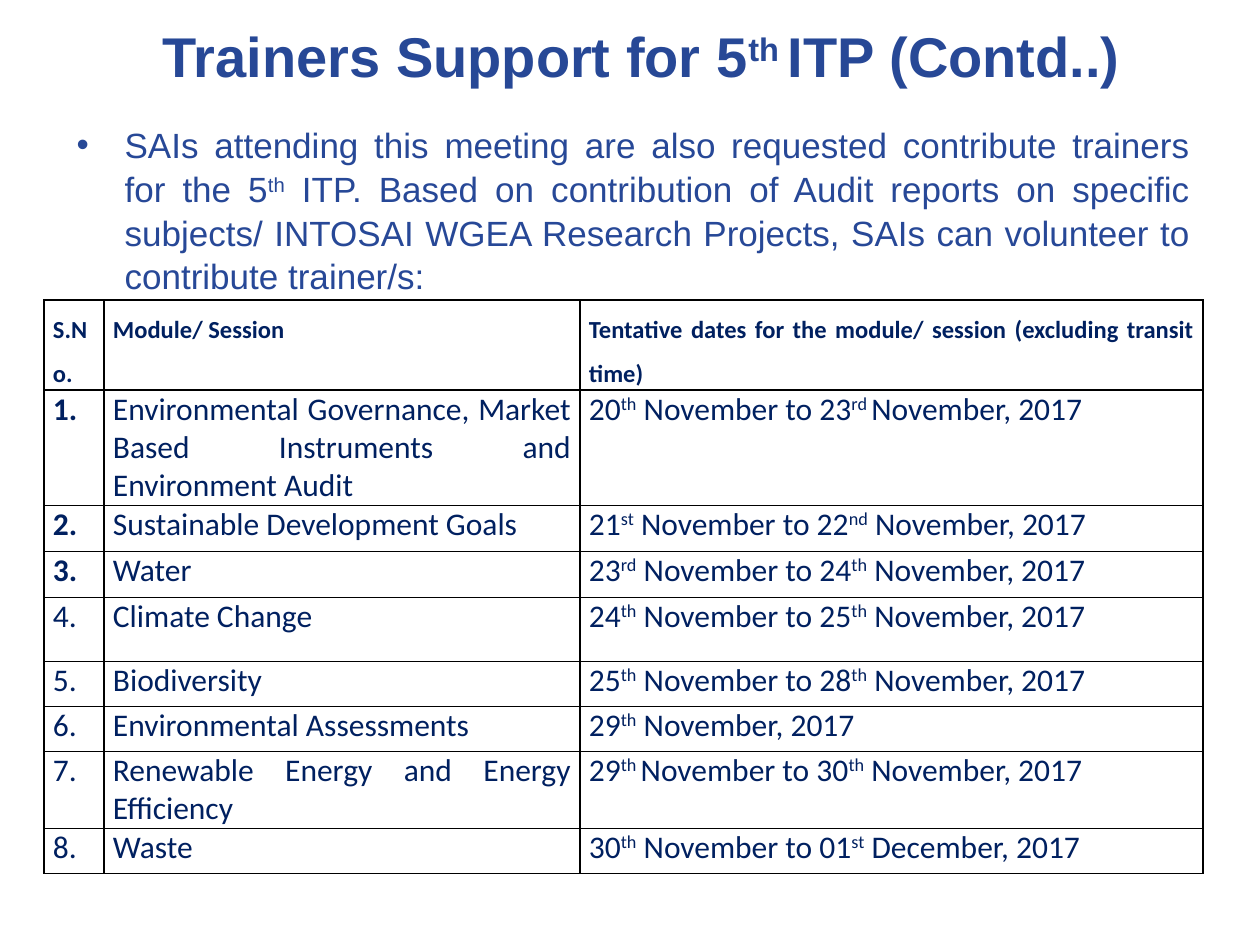
from lxml.etree import SubElement
from pptx import Presentation
from pptx.dml.color import RGBColor
from pptx.enum.text import MSO_ANCHOR, MSO_AUTO_SIZE, PP_ALIGN
from pptx.oxml.ns import qn
from pptx.util import Emu, Pt

HEADINGS = ["S.No.", "Module/ Session",
            "Tentative dates for the module/ session (excluding transit time)"]
SESSIONS = [
    ("Environmental Governance, Market Based Instruments and Environment Audit",
     "20^th^ November to 23^rd ^November, 2017"),
    ("Sustainable Development Goals", "21^st^ November to 22^nd^ November, 2017"),
    ("Water", "23^rd^ November to 24^th^ November, 2017"),
    ("Climate Change", "24^th^ November to 25^th^ November, 2017"),
    ("Biodiversity", "25^th^ November to 28^th^ November, 2017"),
    ("Environmental Assessments", "29^th^ November, 2017"),
    ("Renewable Energy and Energy Efficiency",
     "29^th ^November to 30^th^ November, 2017"),
    ("Waste", "30^th^ November to 01^st^ December, 2017"),
]
BOLD_NUMBERS = 3
COLUMN_WIDTHS = [60, 476, 623]
ROW_HEIGHTS = [90, 96, 46, 46, 64, 45, 45, 39, 45]


def px(length):
    return Emu(round(length * 914400 / 126))


def rgb(value):
    return RGBColor.from_string(value)


class SlideBuilder:
    """Holds the style and the current slide, and adds each kind of element."""

    heading_font, table_font = "Arial", "Calibri"
    title_color, body_color, table_color = "274896", "274897", "002060"
    border_color = "000000"

    def __init__(self, slide):
        self.slide = slide

    def add_runs(self, paragraph, text, size, font, color, bold=False):
        for index, part in enumerate(text.split("^")):
            run = paragraph.add_run()
            run.text = part
            run.font.size = Pt(size)
            run.font.name = font
            run.font.bold = bold
            run.font.color.rgb = rgb(color)
            if index % 2:
                run._r.get_or_add_rPr().set("baseline", "30000")

    def place(self, placeholder, left, top, width, height, anchor):
        placeholder.left, placeholder.top = px(left), px(top)
        placeholder.width, placeholder.height = px(width), px(height)
        frame = placeholder.text_frame
        frame.word_wrap = True
        frame.auto_size = MSO_AUTO_SIZE.NONE
        frame.vertical_anchor = anchor
        return frame.paragraphs[0]

    def title(self, text, *box):
        heading = self.place(self.slide.shapes.title, *box, MSO_ANCHOR.MIDDLE)
        heading.alignment = PP_ALIGN.CENTER
        self.add_runs(heading, text, 32, self.heading_font, self.title_color, True)

    def bullet(self, text, *box):
        request = self.place(self.slide.placeholders[1], *box, MSO_ANCHOR.TOP)
        properties = request._p.get_or_add_pPr()
        properties.set("marL", str(px(48)))
        properties.set("indent", str(px(-48)))
        bullet_color = SubElement(properties, qn("a:buClr"))
        SubElement(bullet_color, qn("a:srgbClr"), val=self.title_color)
        SubElement(properties, qn("a:buFont"), typeface=self.heading_font)
        SubElement(properties, qn("a:buChar"), char="•")
        request.alignment = PP_ALIGN.JUSTIFY
        request.space_before = Pt(0)
        request.line_spacing = 1.04
        self.add_runs(request, text, 20, self.heading_font, self.body_color)

    def border(self, cell):
        properties = cell._tc.get_or_add_tcPr()
        for side in ("a:lnL", "a:lnR", "a:lnT", "a:lnB"):
            line = SubElement(properties, qn(side), w=str(Pt(1)))
            fill = SubElement(line, qn("a:solidFill"))
            SubElement(fill, qn("a:srgbClr"), val=self.border_color)

    def cell(self, cell, text, size, bold, spacing):
        cell.margin_left = cell.margin_right = px(9)
        cell.margin_top = cell.margin_bottom = 0
        self.border(cell)
        cell.fill.background()
        entry = cell.text_frame.paragraphs[0]
        entry.alignment = PP_ALIGN.JUSTIFY
        entry.line_spacing = spacing
        self.add_runs(entry, text, size, self.table_font, self.table_color, bold)

    def schedule(self, left, top):
        table = self.slide.shapes.add_table(
            len(ROW_HEIGHTS), len(COLUMN_WIDTHS), px(left), px(top),
            px(sum(COLUMN_WIDTHS)), px(sum(ROW_HEIGHTS))).table
        table.first_row = table.horz_banding = False
        for column, width in zip(table.columns, COLUMN_WIDTHS):
            column.width = px(width)
        for row, height in zip(table.rows, ROW_HEIGHTS):
            row.height = px(height)
        for column, heading in enumerate(HEADINGS):
            self.cell(table.cell(0, column), heading, 14, True, 1.5)
        for number, session in enumerate(SESSIONS, 1):
            for column, text in enumerate((f"{number}.", *session)):
                bold = column == 0 and number <= BOLD_NUMBERS
                self.cell(table.cell(number, column), text, 18, bold, 1.0)


def main():
    deck = Presentation()
    deck.slide_width, deck.slide_height = px(1260), px(945)
    builder = SlideBuilder(deck.slides.add_slide(deck.slide_layouts[1]))
    builder.title("Trainers Support for 5^th ^ITP (Contd..)", 115, 16, 1053, 79)
    builder.bullet(
        "SAIs attending this meeting are also requested contribute trainers "
        "for the 5^th^ ITP. Based on contribution of Audit reports on specific "
        "subjects/ INTOSAI WGEA Research Projects, SAIs can volunteer to "
        "contribute trainer/s:", 64, 116, 1139, 725)
    builder.schedule(44, 300)
    deck.save("out.pptx")


if __name__ == "__main__":
    main()
